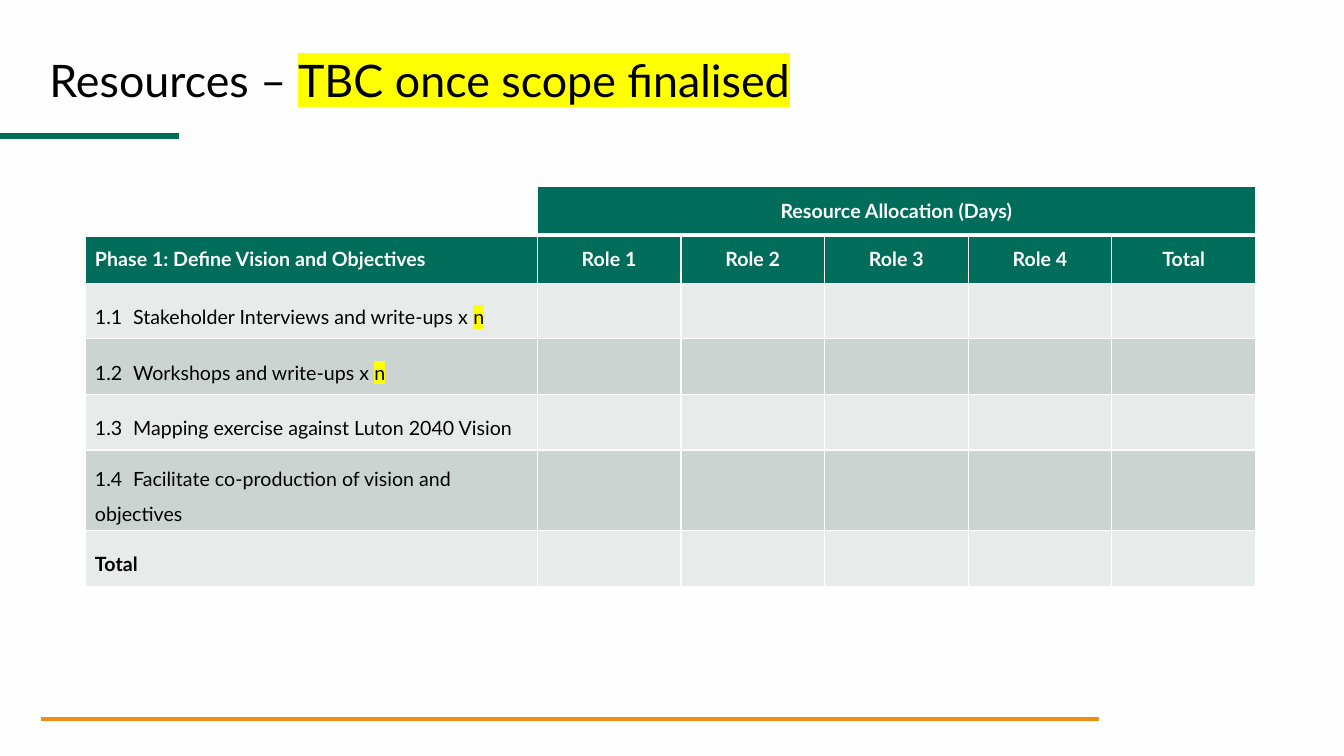
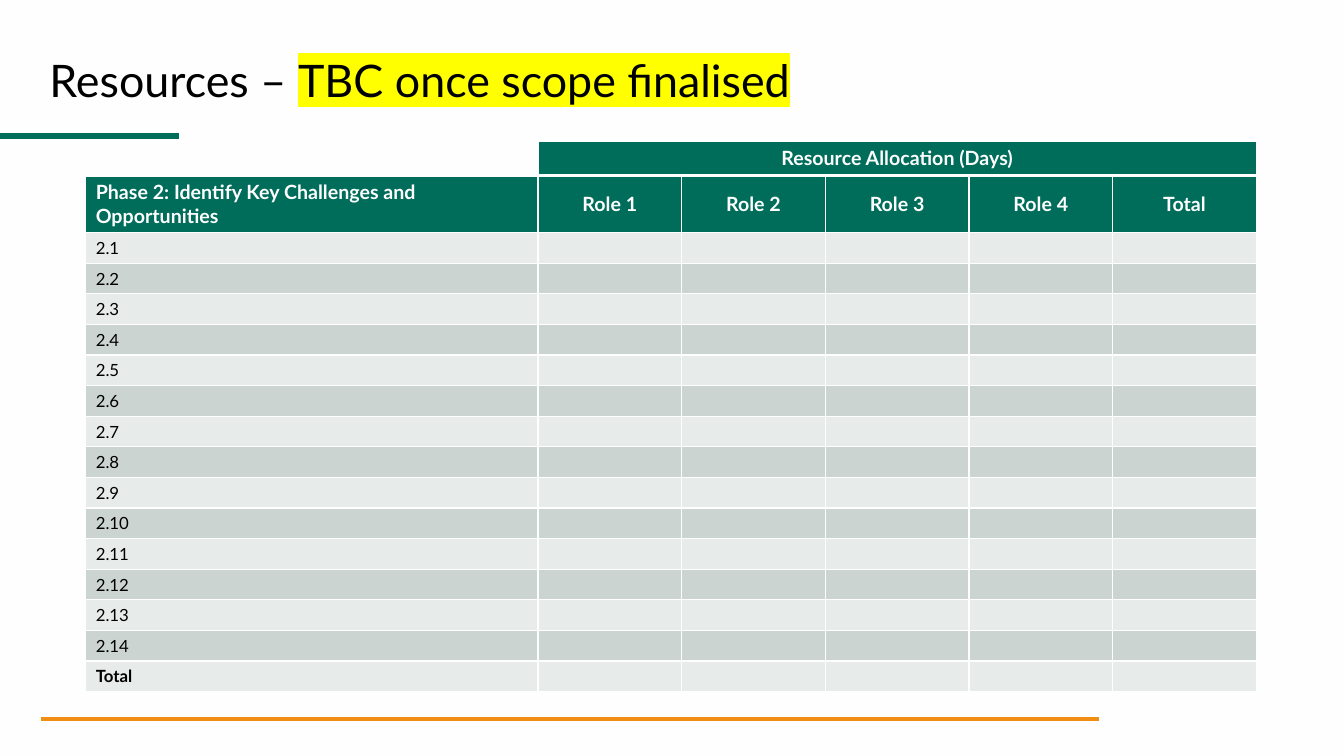
from dataclasses import dataclass

from lxml import etree
from pptx import Presentation
from pptx.dml.color import RGBColor
from pptx.enum.shapes import MSO_CONNECTOR
from pptx.enum.text import MSO_ANCHOR, MSO_AUTO_SIZE, PP_ALIGN
from pptx.oxml.ns import qn
from pptx.util import Cm, Pt

STRAIGHT = MSO_CONNECTOR.STRAIGHT
MIDDLE = MSO_ANCHOR.MIDDLE
NO_AUTOFIT = MSO_AUTO_SIZE.NONE
LEFT, CENTER = PP_ALIGN.LEFT, PP_ALIGN.CENTER
TITLE_ONLY = 5


@dataclass(frozen=True)
class Theme:
    font: str = "Lato"
    paper: str = "FEFEFF"
    ink: str = "000000"
    green: str = "006D5B"
    orange: str = "EF8D14"
    marker: str = "FFFF00"
    bands: tuple = ("E7EBEA", "CCD4D2")
    title_size: int = 32
    header_size: int = 14


THEME = Theme()
TITLE = ("Resources – ", "TBC once scope finalised")
GROUP_HEADING = "Resource Allocation (Days)"
ROLES = [f"Role {number}" for number in range(1, 5)] + ["Total"]
TASK_WIDTH, ROLE_WIDTH = 11.4, 3.62
NUMBER_TAB = 0.96


@dataclass(frozen=True)
class Phase:
    """Lengths in centimetres; each task is a plain text and a highlighted ending."""
    heading: str
    tasks: list
    left: float
    top: float
    header_height: float
    task_height: float
    task_size: int
    line_spacing: float


PHASES = [
    Phase(
        "Phase 1: Define Vision and Objectives",
        [
            ("1.1\tStakeholder Interviews and write-ups x ", "n"),
            ("1.2\tWorkshops and write-ups x ", "n"),
            ("1.3\tMapping exercise against Luton 2040 Vision", ""),
            ("1.4\tFacilitate co-production of vision and objectives", ""),
        ],
        left=2.14, top=4.7, header_height=1.22, task_height=1.4,
        task_size=14, line_spacing=1.5,
    ),
    Phase(
        "Phase 2: Identify Key Challenges and Opportunities",
        [(f"2.{number}", "") for number in range(1, 15)],
        left=2.16, top=3.56, header_height=0.86, task_height=0.76,
        task_size=12, line_spacing=1.0,
    ),
]


def rgb(color):
    return RGBColor.from_string(color)


def add_solid_fill(parent, color):
    fill = etree.SubElement(parent, qn("a:solidFill"))
    etree.SubElement(fill, qn("a:srgbClr"), val=color)


def highlight(span):
    properties = span.font._element
    mark = etree.Element(qn("a:highlight"))
    etree.SubElement(mark, qn("a:srgbClr"), val=THEME.marker)
    properties.find(qn("a:latin")).addprevious(mark)


def write(para, plain, marked="", size=THEME.header_size, color=THEME.ink, bold=False):
    """Write plain text, then an optional highlighted ending."""
    for text in filter(None, (plain, marked)):
        span = para.add_run()
        span.text = text
        span.font.size = Pt(size)
        span.font.name = THEME.font
        span.font.bold = bold
        span.font.color.rgb = rgb(color)
    if marked:
        highlight(span)


def add_rule(slide, start, end, height, color, width):
    """Draw a horizontal line and hand it over to the slide's layout."""
    rule = slide.shapes.add_connector(STRAIGHT, Cm(start), Cm(height), Cm(end), Cm(height))
    rule.line.color.rgb = rgb(color)
    rule.line.width = Pt(width)
    etree.SubElement(rule._element.spPr, qn("a:effectLst"))
    slide.slide_layout.shapes._spTree.append(rule._element)


def style_layout(layout):
    background = layout.slide_master.background.fill
    background.solid()
    background.fore_color.rgb = rgb(THEME.paper)
    title = layout.placeholders[0]
    title.left, title.top = Cm(0.99), Cm(1.02)
    title.width, title.height = Cm(31.83), Cm(2.13)
    title.text_frame.vertical_anchor = MIDDLE
    title.text_frame.auto_size = NO_AUTOFIT


def add_title(slide):
    para = slide.shapes.title.text_frame.paragraphs[0]
    para.alignment = LEFT
    para.line_spacing = 0.9
    write(para, *TITLE, size=THEME.title_size)


def set_borders(cell, top=1, bottom=1):
    properties = cell._tc.get_or_add_tcPr()
    for side, width in (("L", 1), ("R", 1), ("T", top), ("B", bottom)):
        line = etree.SubElement(properties, qn(f"a:ln{side}"), w=str(Pt(width)))
        add_solid_fill(line, THEME.paper)


def fill_cell(cell, color):
    cell.vertical_anchor = MIDDLE
    cell.fill.solid()
    cell.fill.fore_color.rgb = rgb(color)


def set_empty_size(cell, size):
    """Keep an empty cell from stretching its row."""
    para = cell.text_frame.paragraphs[0]
    etree.SubElement(para._p, qn("a:endParaRPr"), sz=str(size * 100))


def write_header(cell, text, alignment=CENTER):
    fill_cell(cell, THEME.green)
    para = cell.text_frame.paragraphs[0]
    para.alignment = alignment
    write(para, text, color=THEME.paper, bold=True)


def write_task(cell, phase, plain, marked, bold):
    para = cell.text_frame.paragraphs[0]
    para.line_spacing = phase.line_spacing
    if "\t" in plain:
        tabs = etree.SubElement(para._p.get_or_add_pPr(), qn("a:tabLst"))
        etree.SubElement(tabs, qn("a:tab"), pos=str(Cm(NUMBER_TAB)), algn="l")
    write(para, plain, marked, size=phase.task_size, bold=bold)


def add_phase_table(slide, phase):
    lines = phase.tasks + [("Total", "")]
    heights = [phase.header_height] * 2 + [phase.task_height] * len(lines)
    widths = [TASK_WIDTH] + [ROLE_WIDTH] * len(ROLES)
    frame = slide.shapes.add_table(
        len(heights), len(widths), Cm(phase.left), Cm(phase.top),
        Cm(sum(widths)), Cm(sum(heights)),
    )
    table = frame.table
    table.first_row = table.horz_banding = False
    for column, width in zip(table.columns, widths):
        column.width = Cm(width)
    for row_index, (row, height) in enumerate(zip(table.rows, heights)):
        row.height = Cm(height)
        for cell in row.cells:
            set_borders(cell, top=3 if row_index == 1 else 1, bottom=3 if row_index == 0 else 1)

    corner, group = table.cell(0, 0), table.cell(0, 1)
    corner.fill.background()
    set_empty_size(corner, THEME.header_size)
    group.merge(table.cell(0, len(ROLES)))
    write_header(group, GROUP_HEADING)
    write_header(table.cell(1, 0), phase.heading, LEFT)
    for column_index, role in enumerate(ROLES, 1):
        write_header(table.cell(1, column_index), role)

    for index, (plain, marked) in enumerate(lines):
        cells = list(table.rows[index + 2].cells)
        for cell in cells:
            fill_cell(cell, THEME.bands[index % 2])
        write_task(cells[0], phase, plain, marked, bold=index == len(phase.tasks))
        for cell in cells[1:]:
            set_empty_size(cell, phase.task_size)


def main():
    deck = Presentation()
    deck.slide_width, deck.slide_height = Cm(33.87), Cm(19.05)
    layout = deck.slide_layouts[TITLE_ONLY]
    style_layout(layout)
    pages = [deck.slides.add_slide(layout) for _ in PHASES]
    add_rule(pages[0], 1.04, 27.69, 18.11, THEME.orange, 3)
    add_rule(pages[0], 0, 4.52, 3.43, THEME.green, 4.5)
    for page, phase in zip(pages, PHASES):
        add_title(page)
        add_phase_table(page, phase)
    deck.save("out.pptx")


if __name__ == "__main__":
    main()
